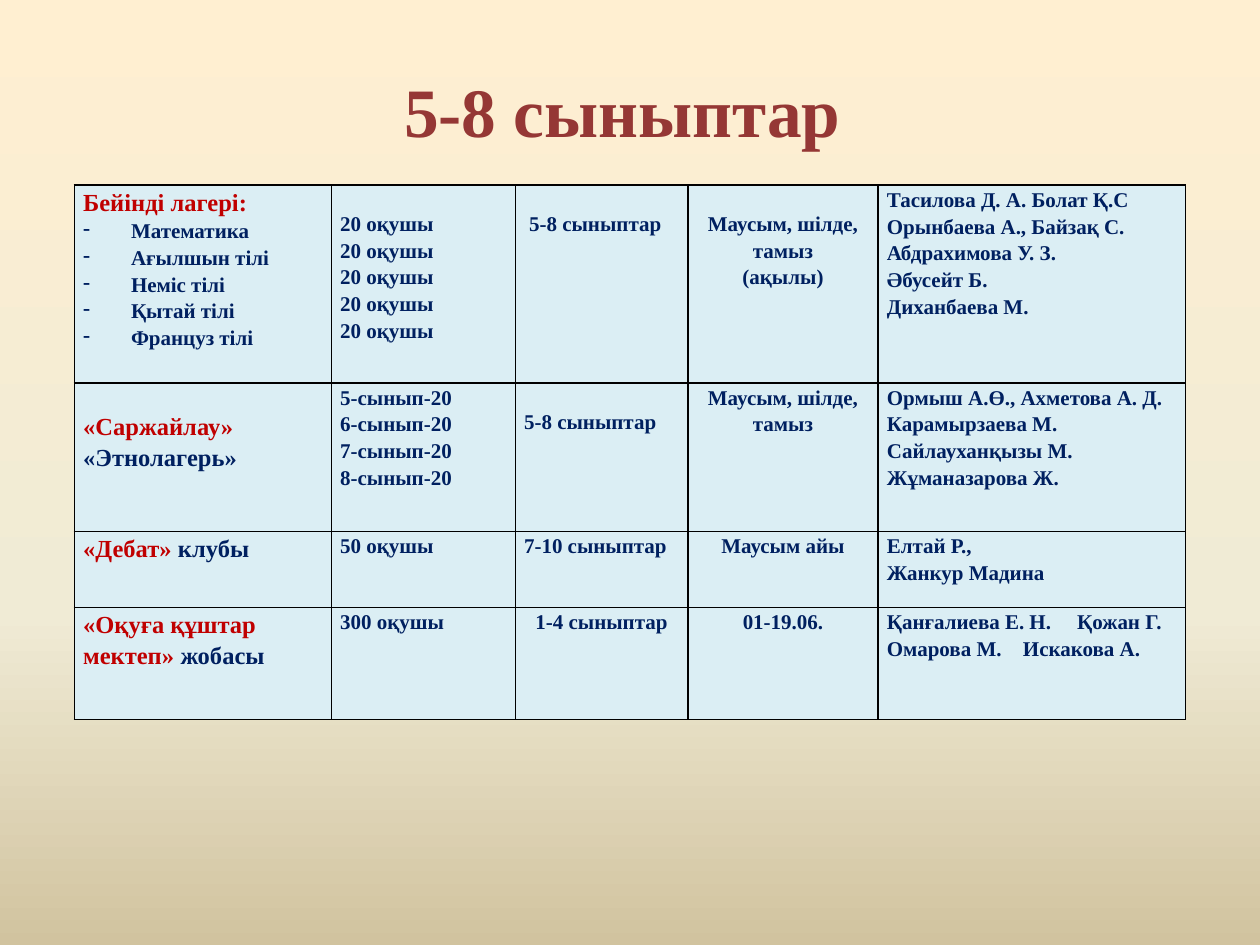
from copy import deepcopy
from dataclasses import dataclass

from lxml import etree
from pptx import Presentation
from pptx.dml.color import RGBColor
from pptx.enum.text import MSO_ANCHOR, MSO_AUTO_SIZE, PP_ALIGN
from pptx.oxml.ns import qn
from pptx.util import Inches, Pt

LEFT, CENTER = PP_ALIGN.LEFT, PP_ALIGN.CENTER
MIDDLE = MSO_ANCHOR.MIDDLE
NO_AUTOFIT = MSO_AUTO_SIZE.NONE
FONT = "Times New Roman"
RED, NAVY, BROWN, PALE, BLACK = "C00000", "002060", "953735", "DBEEF4", "000000"
TITLE_ONLY = 5
LINE_DROP = 0.19


@dataclass
class Span:
    text: str
    size: float = 12
    color: str = NAVY


@dataclass
class Para:
    spans: list[Span]
    align: PP_ALIGN = LEFT
    bullet: bool = False
    indent: float = 0
    tab: float = 0


@dataclass
class Cell:
    paras: list[Para]
    top: float = 0


def rgb(color: str) -> RGBColor:
    return RGBColor.from_string(color)


def lines(*texts: str, align: PP_ALIGN = LEFT, top: float = 0) -> Cell:
    return Cell([Para([Span(text)], align) for text in texts], top)


def heading(red: str, navy: str = "", top: float = 0) -> Cell:
    spans = [Span(red, 14, RED)]
    if navy:
        spans.append(Span(navy, 14))
    return Cell([Para(spans)], top)


def add_span(para, span: Span) -> None:
    run = para.add_run()
    run.text = span.text
    run.font.name = FONT
    run.font.size = Pt(span.size)
    run.font.bold = True
    run.font.color.rgb = rgb(span.color)


def format_para(para, content: Para) -> None:
    para.alignment = content.align
    para.line_spacing = 1.15
    properties = para._p.get_or_add_pPr()
    if content.bullet:
        properties.set("marL", str(Inches(0.38)))
        properties.set("indent", str(-Inches(0.38)))
        etree.SubElement(properties, qn("a:buChar"), char="-")
    if content.indent:
        properties.set("marL", str(Inches(content.indent)))
        properties.set("indent", "0")
    if content.tab:
        tabs = etree.SubElement(properties, qn("a:tabLst"))
        etree.SubElement(tabs, qn("a:tab"), pos=str(Inches(content.tab)), algn="l")
    for span in content.spans:
        add_span(para, span)


def add_borders(cell) -> None:
    properties = cell._tc.get_or_add_tcPr()
    for position, side in enumerate(("lnL", "lnR", "lnT", "lnB")):
        line = etree.Element(qn(f"a:{side}"), w=str(Pt(1)))
        fill = etree.SubElement(line, qn("a:solidFill"))
        etree.SubElement(fill, qn("a:srgbClr"), val=BLACK)
        properties.insert(position, line)


def fill_cell(cell, content: Cell) -> None:
    cell.margin_left = cell.margin_right = Inches(0.07)
    cell.margin_top = Inches(content.top)
    cell.margin_bottom = 0
    cell.fill.solid()
    cell.fill.fore_color.rgb = rgb(PALE)
    add_borders(cell)
    frame = cell.text_frame
    for index, para in enumerate(content.paras):
        format_para(frame.add_paragraph() if index else frame.paragraphs[0], para)


def add_background(page) -> None:
    fill = page.background.fill
    fill.gradient()
    fill.gradient_angle = 270
    stop_list = page.element.xpath(".//a:gsLst")[0]
    stop_list.append(deepcopy(stop_list[-1]))
    stops = ((0, "FFEFD1"), (0.65, "F0EBD5"), (1, "D1C39F"))
    for stop, (position, color) in zip(fill.gradient_stops, stops):
        stop.position = position
        stop.color.rgb = rgb(color)


def add_title(page, text: str) -> None:
    box = page.shapes.title
    box.left, box.top = Inches(0.44), Inches(0.68)
    box.width, box.height = Inches(9), Inches(0.38)
    frame = box.text_frame
    frame.auto_size = NO_AUTOFIT
    frame.vertical_anchor = MIDDLE
    para = frame.paragraphs[0]
    para.alignment = CENTER
    add_span(para, Span(text, 39.6, BROWN))


def add_camp_table(page, rows: list[list[Cell]]) -> None:
    widths = (2.04, 1.46, 1.37, 1.51, 2.44)
    heights = (1.57, 1.18, 0.6, 0.89)
    table = page.shapes.add_table(
        len(heights), len(widths), Inches(0.59), Inches(1.47),
        Inches(sum(widths)), Inches(sum(heights)),
    ).table
    table.first_row = table.horz_banding = False
    for column, width in zip(table.columns, widths):
        column.width = Inches(width)
    for row, height, contents in zip(table.rows, heights, rows):
        row.height = Inches(height)
        for cell, content in zip(row.cells, contents):
            fill_cell(cell, content)


subjects = ("Математика", "Ағылшын тілі", "Неміс тілі", "Қытай тілі", "Француз тілі")
camp = heading("Бейінді лагері:")
camp.paras += [Para([Span(subject)], bullet=True) for subject in subjects]

ROWS = [
    [
        camp,
        lines(*["20 оқушы"] * len(subjects), top=LINE_DROP),
        Cell([Para([Span("5-8 сыныптар")], indent=0.04)], LINE_DROP),
        lines("Маусым, шілде, тамыз", "(ақылы)", align=CENTER, top=LINE_DROP),
        lines("Тасилова Д. А. Болат Қ.С", "Орынбаева А., Байзақ С.",
              "Абдрахимова У. З.", "Әбусейт Б.", "Диханбаева М."),
    ],
    [
        heading("«Саржайлау» ", "«Этнолагерь»", top=0.21),
        lines(*[f"{grade}-сынып-20" for grade in range(5, 9)]),
        lines("5-8 сыныптар", top=LINE_DROP),
        lines("Маусым, шілде, тамыз", align=CENTER),
        lines("Ормыш А.Ө., Ахметова А. Д.",
              "Карамырзаева М. Сайлауханқызы М. Жұманазарова Ж."),
    ],
    [
        heading("«Дебат» ", "клубы"),
        lines("50 оқушы"),
        lines("7-10 сыныптар"),
        lines("Маусым айы", align=CENTER),
        lines("Елтай Р.,", "Жанкур Мадина"),
    ],
    [
        heading("«Оқуға құштар мектеп» ", "жобасы"),
        lines("300 оқушы"),
        lines("1-4 сыныптар", align=CENTER),
        lines("01-19.06.", align=CENTER),
        Cell([Para([Span("Қанғалиева Е. Н.\tҚожан Г.")], tab=1.51),
              Para([Span("Омарова М.\tИскакова А.")], tab=1.08)]),
    ],
]


def main() -> None:
    deck = Presentation()
    deck.slide_width, deck.slide_height = Inches(10), Inches(7.5)
    page = deck.slides.add_slide(deck.slide_layouts[TITLE_ONLY])
    add_background(page)
    add_title(page, "5-8 сыныптар")
    add_camp_table(page, ROWS)
    deck.save("out.pptx")


if __name__ == "__main__":
    main()
